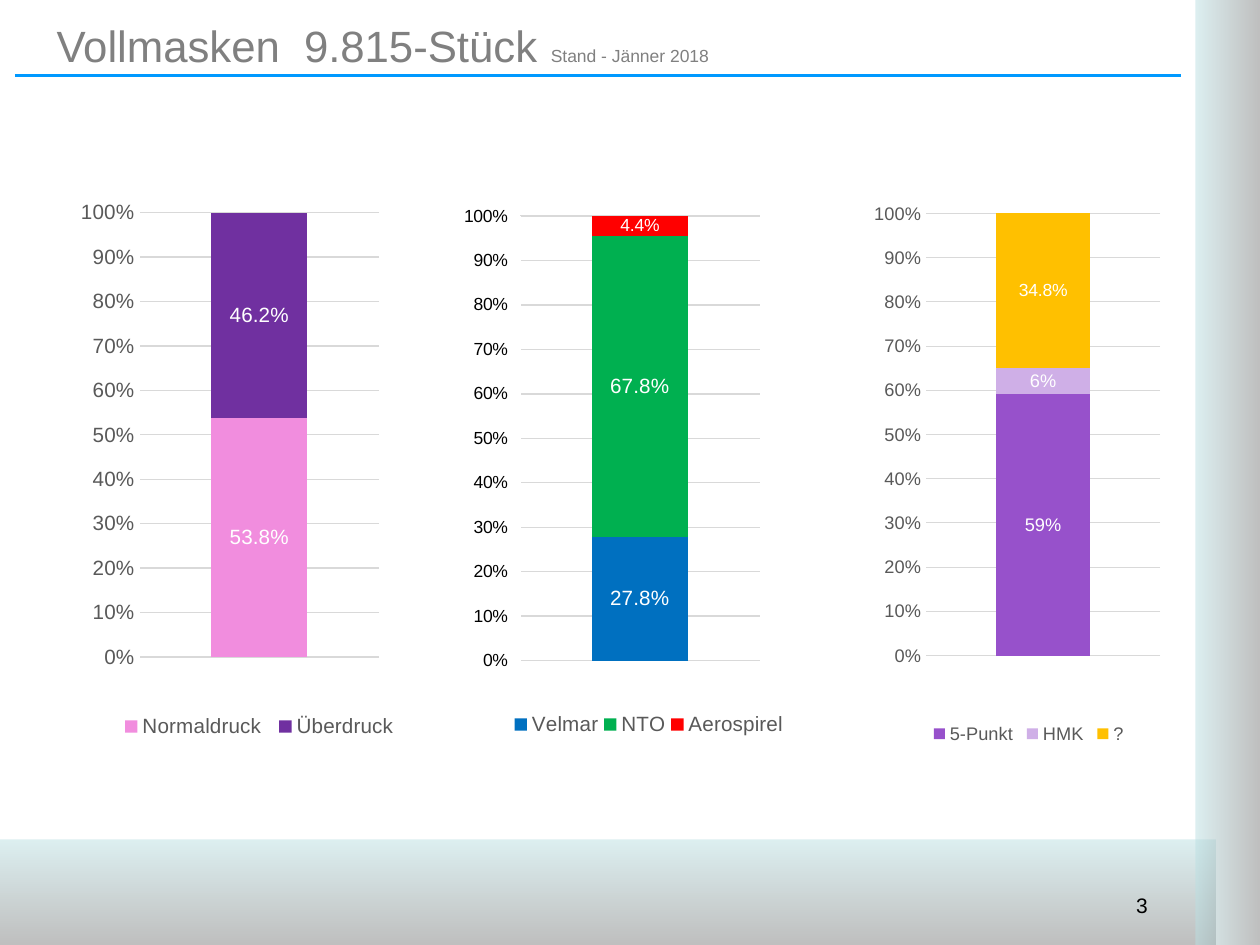
"""Build the full-mask overview slide with three stacked percentage columns."""
from dataclasses import dataclass

from lxml import etree
from pptx import Presentation
from pptx import util as u
from pptx.chart.data import CategoryChartData
from pptx.dml.color import RGBColor
from pptx.enum import chart as ch, shapes, text
from pptx.oxml.ns import qn


@dataclass(frozen=True)
class Theme:
    font: str = "Arial"
    black: str = "000000"
    white: str = "FFFFFF"
    grey: str = "808080"
    label: str = "595959"
    grid: str = "D9D9D9"
    rule: str = "0099FF"
    pale: str = "BBE0E3"
    title: float = 25
    gap: float = 28
    note: float = 10
    number: float = 12
    large: float = 11.8
    medium: float = 10.4
    small: float = 10


T = Theme()


@dataclass(frozen=True)
class Box:
    x: float
    y: float
    w: float
    h: float

    def cm(self) -> list[u.Length]:
        return [u.Cm(v) for v in (self.x, self.y, self.w, self.h)]


@dataclass(frozen=True)
class Segment:
    name: str
    value: float
    color: str
    size: float
    fmt: str = "0.0%"


@dataclass(frozen=True)
class Column:
    box: Box
    plot: Box
    legend: Box
    segments: tuple[Segment, ...]
    legend_size: float = T.large
    axis_size: float = T.large
    axis_color: str = T.label
    ticks: bool = False
    grid: float = 0.75


@dataclass(frozen=True)
class Band:
    box: Box
    angle: float


WIDE_PLOT = Box(0.2, 0.04, 0.66, 0.8)
COLUMNS = (
    Column(Box(16.71, 3.78, 7.26, 13.11), Box(0.27, 0.04, 0.65, 0.68),
           Box(0.27, 0.81, 0.57, 0.06),
           (Segment("5-Punkt", 0.59, "9751CB", T.medium, "0%"),
            Segment("HMK", 0.06, "CFAFE7", T.medium, "0%"),
            Segment("?", 0.348, "FFC000", T.small)),
           legend_size=T.medium, axis_size=T.medium, grid=0.65),
    Column(Box(1.35, 3.84, 7.32, 11.2), WIDE_PLOT, Box(0.13, 0.93, 0.8, 0.07),
           (Segment("Normaldruck", 0.538, "F18DDE", T.large),
            Segment("Überdruck", 0.462, "7030A0", T.large))),
    Column(Box(9.02, 3.91, 7.32, 11.2), WIDE_PLOT, Box(0.17, 0.92, 0.77, 0.07),
           (Segment("Velmar", 0.278, "0070C0", T.large),
            Segment("NTO", 0.678, "00B050", T.large),
            Segment("Aerospirel", 0.044, "FF0000", T.small)),
           axis_size=T.small, axis_color=T.black, ticks=True),
)
BANDS = (Band(Box(0, 16.92, 24.51, 2.13), 270), Band(Box(24.1, 0, 1.3, 19.05), 0))


def rgb(color: str) -> RGBColor:
    return RGBColor.from_string(color)


def style(font, size: float, color: str) -> None:
    font.name, font.size = T.font, u.Pt(size)
    font.color.rgb = rgb(color)


def add_band(s, band: Band) -> None:
    sp = s.shapes.add_shape(shapes.MSO_SHAPE.RECTANGLE, *band.box.cm())
    sp.shadow.inherit = False
    sp.line.fill.background()
    sp.fill.gradient()
    sp.fill.gradient_angle = band.angle
    for stop, color, pos in zip(sp.fill.gradient_stops, (T.pale, T.grey), (0, 1)):
        stop.color.rgb, stop.position = rgb(color), pos
    for color in sp.element.spPr.iter(qn("a:srgbClr")):
        etree.SubElement(color, qn("a:alpha"), val="49000")


def add_text(s, box: Box, *runs: tuple[str, float], color: str = T.black,
             align=text.PP_ALIGN.LEFT, anchor=text.MSO_ANCHOR.TOP) -> None:
    tf = s.shapes.add_textbox(*box.cm()).text_frame
    tf.word_wrap, tf.vertical_anchor = True, anchor
    p = tf.paragraphs[0]
    p.alignment = align
    for content, size in runs:
        r = p.add_run()
        r.text = content
        style(r.font, size, color)


def add_rule(s, x1: float, x2: float, y: float) -> None:
    line = s.shapes.add_connector(shapes.MSO_CONNECTOR.STRAIGHT,
                                  u.Cm(x1), u.Cm(y), u.Cm(x2), u.Cm(y))
    line.line.color.rgb, line.line.width = rgb(T.rule), u.Pt(2)
    etree.SubElement(line.element.spPr, qn("a:effectLst"))


def set_layout(parent, index: int, box: Box, inner: bool = False) -> None:
    for old in parent.findall(qn("c:layout")):
        parent.remove(old)
    layout = etree.Element(qn("c:layout"))
    manual = etree.SubElement(layout, qn("c:manualLayout"))
    values = {"layoutTarget": "inner"} if inner else {}
    values |= {"xMode": "edge", "yMode": "edge",
               "x": box.x, "y": box.y, "w": box.w, "h": box.h}
    for tag, value in values.items():
        etree.SubElement(manual, qn(f"c:{tag}"), val=str(value))
    parent.insert(index, layout)


def add_column(s, col: Column) -> None:
    data = CategoryChartData(number_format="0.0%")
    data.categories = ["1"]
    for segment in col.segments:
        data.add_series(segment.name, [segment.value])
    chart = s.shapes.add_chart(ch.XL_CHART_TYPE.COLUMN_STACKED_100,
                               *col.box.cm(), data).chart
    style(chart.font, T.small, T.black)
    chart.has_title = False
    chart.has_legend = True
    chart.legend.position = ch.XL_LEGEND_POSITION.BOTTOM
    chart.legend.include_in_layout = False
    style(chart.legend.font, col.legend_size, T.label)
    chart.category_axis.visible = False

    axis = chart.value_axis
    axis.minimum_scale, axis.maximum_scale, axis.major_unit = 0, 1, 0.1
    axis.major_tick_mark = ch.XL_TICK_MARK.OUTSIDE if col.ticks else ch.XL_TICK_MARK.NONE
    axis.minor_tick_mark = ch.XL_TICK_MARK.NONE
    axis.tick_labels.number_format = "0%"
    axis.tick_labels.number_format_is_linked = False
    style(axis.tick_labels.font, col.axis_size, col.axis_color)
    if col.ticks:
        axis.format.line.color.rgb, axis.format.line.width = rgb(T.white), u.Pt(0.75)
    else:
        axis.format.line.fill.background()
    grid = axis.major_gridlines.format.line
    grid.color.rgb, grid.width = rgb(T.grid), u.Pt(col.grid)

    plot = chart.plots[0]
    plot.gap_width, plot.overlap, plot.vary_by_categories = 150, 100, False
    for series, segment in zip(plot.series, col.segments):
        series.format.fill.solid()
        series.format.fill.fore_color.rgb = rgb(segment.color)
        labels = series.data_labels
        labels.show_value = True
        labels.number_format, labels.number_format_is_linked = segment.fmt, False
        style(labels.font, segment.size, T.white)
    root = chart.element
    set_layout(root.find(".//" + qn("c:plotArea")), 0, col.plot, inner=True)
    set_layout(root.find(".//" + qn("c:legend")), 1, col.legend)


def main() -> None:
    prs = Presentation()
    prs.slide_width, prs.slide_height = u.Cm(25.4), u.Cm(19.05)
    s = prs.slides.add_slide(prs.slide_layouts[6])
    for band in BANDS:
        add_band(s, band)
    add_text(s, Box(21.59, 17.86, 1.8, 0.79), ("3", T.number), align=text.PP_ALIGN.RIGHT)
    add_text(s, Box(0.89, 0, 21.97, 1.73), ("Vollmasken  9.815-Stück", T.title),
             (" ", T.gap), ("Stand - Jänner 2018", T.note),
             color=T.grey, anchor=text.MSO_ANCHOR.MIDDLE)
    add_rule(s, 0.3, 23.8, 1.52)
    for col in COLUMNS:
        add_column(s, col)
    prs.save("out.pptx")


if __name__ == "__main__":
    main()
